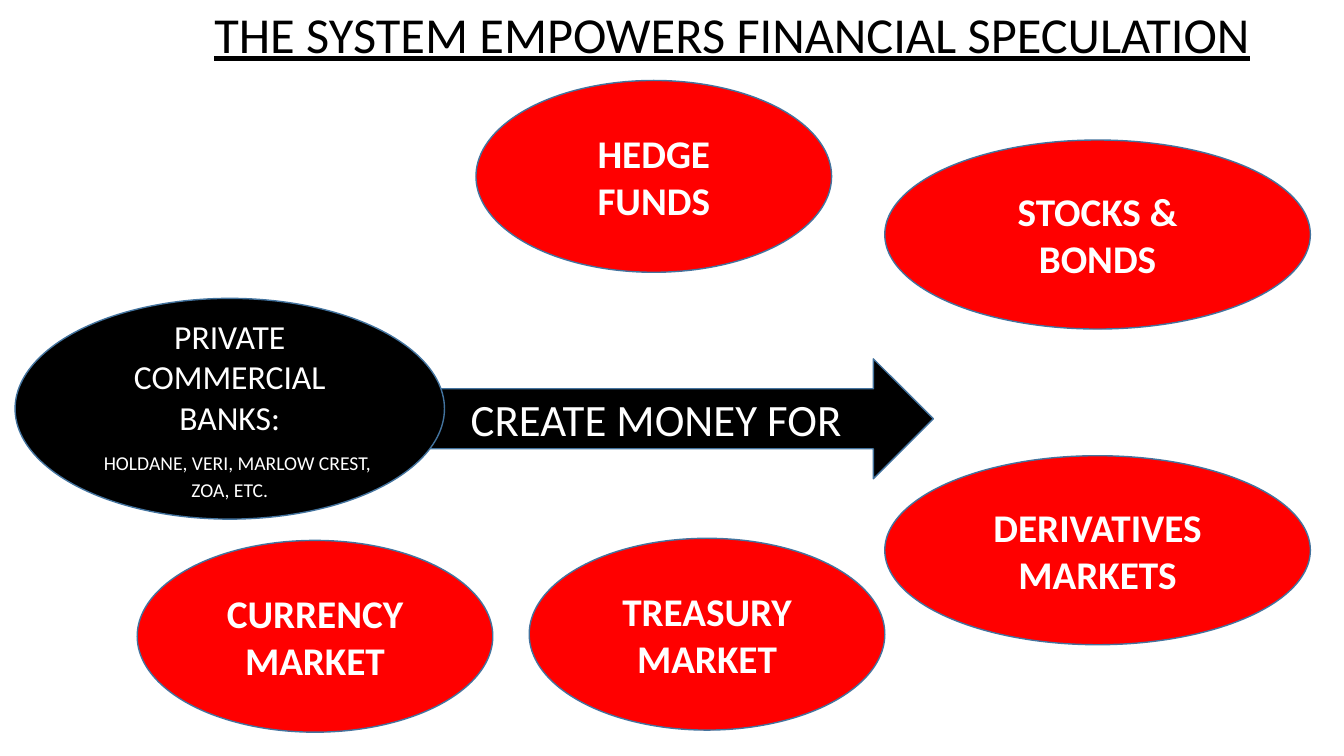
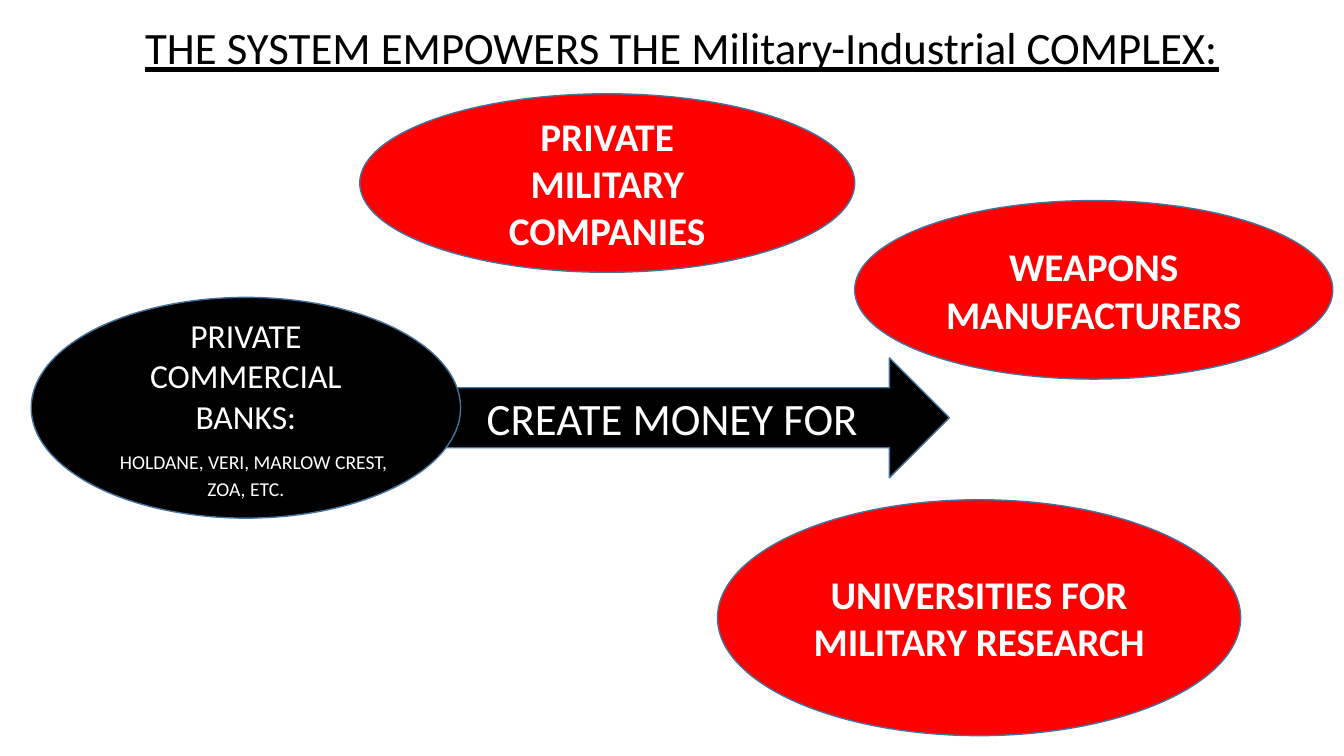
"""Build two slides that show where bank money goes."""
from dataclasses import dataclass

from pptx import Presentation as Deck
from pptx.dml.color import RGBColor as Rgb
from pptx.enum.shapes import MSO_SHAPE as Form
from pptx.enum.text import MSO_ANCHOR as Anchor, MSO_AUTO_SIZE as Fit, PP_ALIGN as Align
from pptx.slide import Slide
from pptx.util import Pt

WHITE, BLACK, RED, EDGE = "FFFFFF", "000000", "FF0000", "43739E"
TITLE = {"underline": True}
GOAL = {"size": Pt(28), "bold": True}
ARROW = {"size": Pt(32)}
BANK = {"size": Pt(24)}
NOTE = {"size": Pt(14)}
LOOSE = {"space_before": Pt(6.8), "line_spacing": Pt(19.7)}


@dataclass(frozen=True)
class Box:
    left: float
    top: float
    width: float
    height: float

    def points(self) -> tuple:
        return Pt(self.left), Pt(self.top), Pt(self.width), Pt(self.height)


@dataclass(frozen=True)
class Line:
    text: str
    font: dict
    color: str = WHITE
    space: dict | None = None
    indent: float = 0


@dataclass(frozen=True)
class Goal:
    box: Box
    texts: tuple[str, ...]


@dataclass(frozen=True)
class Page:
    title: str
    size: int
    head: Box
    left: float
    top: float
    goals: tuple[Goal, ...]


PAGES = (
    Page("THE SYSTEM EMPOWERS FINANCIAL SPECULATION", 36,
         Box(146, -1.5, 762, 51), 10.8, 213.1, (
             Goal(Box(98, 386, 254, 137), ("CURRENCY", "MARKET")),
             Goal(Box(632, 100, 304, 135), ("STOCKS &\vBONDS",)),
             Goal(Box(378, 384.5, 254, 137), ("TREASURY", "MARKET")),
             Goal(Box(340, 57.5, 254, 137), ("HEDGE\vFUNDS",)),
             Goal(Box(632, 325.5, 304, 135), ("DERIVATIVES", "MARKETS")),
         )),
    Page("THE SYSTEM EMPOWERS THE Military-Industrial COMPLEX:", 32,
         Box(96.5, 10.8, 790, 46), 22.3, 212.4, (
             Goal(Box(610.5, 143.3, 341.5, 127.5), ("WEAPONS", "MANUFACTURERS")),
             Goal(Box(512.5, 357, 373.7, 168.5), ("UNIVERSITIES FOR", "MILITARY RESEARCH")),
             Goal(Box(257, 67, 353.5, 127.5), ("PRIVATE", "MILITARY COMPANIES")),
         )),
)


def paint(color: str) -> Rgb:
    return Rgb.from_string(color)


def apply(item: object, values: dict) -> None:
    for name, value in values.items():
        setattr(item, name, value)


def write(frame: object, lines: list[Line], align: Align) -> None:
    for place, line in enumerate(lines):
        para = frame.add_paragraph() if place else frame.paragraphs[0]
        para.text = line.text
        apply(para, {"alignment": align, **(line.space or {})})
        if line.indent:
            para._p.get_or_add_pPr().set("indent", str(Pt(line.indent)))
        for run in para.runs:
            apply(run.font, {"name": "Calibri", **line.font})
            run.font.color.rgb = paint(line.color)


def draw(slide: Slide, form: Form, box: Box, fill: str, lines: list[Line]) -> None:
    shape = slide.shapes.add_shape(form, *box.points())
    shape.shadow.inherit = False
    shape.fill.solid()
    shape.fill.fore_color.rgb = paint(fill)
    shape.line.color.rgb = paint(EDGE)
    shape.line.width = Pt(1)
    apply(shape.text_frame, {"word_wrap": True, "vertical_anchor": Anchor.MIDDLE})
    write(shape.text_frame, lines, Align.CENTER)


def head(slide: Slide, page: Page) -> None:
    frame = slide.shapes.add_textbox(*page.head.points()).text_frame
    apply(frame, {"word_wrap": False, "auto_size": Fit.SHAPE_TO_FIT_TEXT})
    write(frame, [Line(page.title, {**TITLE, "size": Pt(page.size)}, BLACK)], Align.LEFT)


def source(slide: Slide, left: float, top: float) -> None:
    draw(slide, Form.RIGHT_ARROW, Box(left + 281.5, top + 43.2, 374.4, 85.7), BLACK,
         [Line("CREATE MONEY FOR", ARROW)])
    draw(slide, Form.OVAL, Box(left, top, 306.7, 157.7), BLACK, [
        Line("PRIVATE COMMERCIAL BANKS:", BANK),
        Line("HOLDANE, VERI, MARLOW CREST, ZOA, ETC.", NOTE, space=LOOSE, indent=11),
    ])


def main() -> None:
    deck = Deck()
    apply(deck, {"slide_width": Pt(960), "slide_height": Pt(540)})
    for page in PAGES:
        slide = deck.slides.add_slide(deck.slide_layouts[6])
        head(slide, page)
        source(slide, page.left, page.top)
        for goal in page.goals:
            draw(slide, Form.OVAL, goal.box, RED, [Line(text, GOAL) for text in goal.texts])
    deck.save("out.pptx")


if __name__ == "__main__":
    main()
